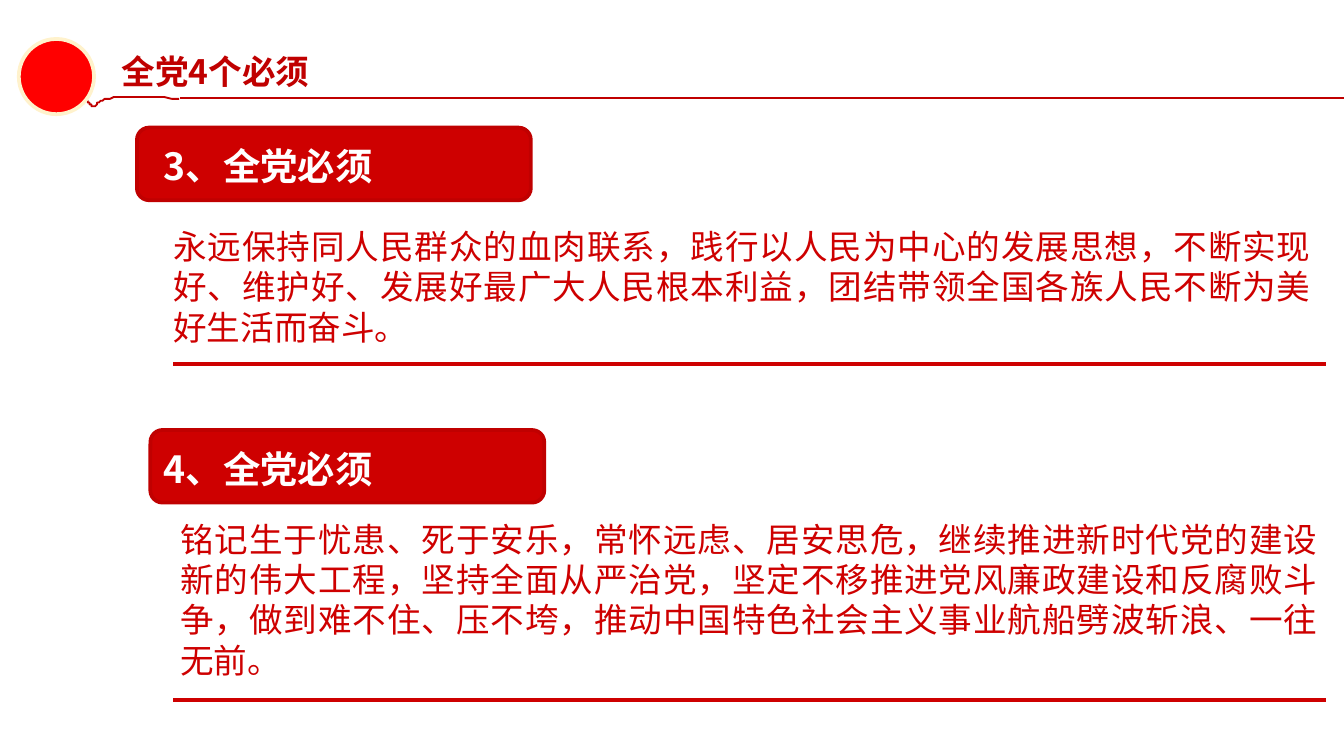
from lxml import etree
from pptx import Presentation
from pptx.dml.color import RGBColor
from pptx.enum.shapes import MSO_CONNECTOR, MSO_SHAPE
from pptx.enum.text import MSO_ANCHOR, MSO_AUTO_SIZE, PP_ALIGN
from pptx.oxml.ns import qn
from pptx.util import Pt

STRAIGHT = MSO_CONNECTOR.STRAIGHT
OVAL, ROUNDED = MSO_SHAPE.OVAL, MSO_SHAPE.ROUNDED_RECTANGLE
TOP, NO_FIT = MSO_ANCHOR.TOP, MSO_AUTO_SIZE.NONE
LEFT, JUSTIFY = PP_ALIGN.LEFT, PP_ALIGN.JUSTIFY

COLORS = {"dark": "C00000", "red": "CE0000", "sun": "FF0000",
          "cream": "FFF2CC", "white": "FFFFFF"}
FONT = "Noto Sans CJK SC"

WAVE_START = (25.9, 55.4)
WAVE_CURVES = [
    ((28.8, 54.7), (31.7, 51.1), (34.6, 51.8)),
    ((38.2, 51.8), (35.3, 55.4), (38.2, 56.2)),
    ((41, 56.9), (42.5, 53.3), (44.6, 53.3)),
    ((46.8, 53.3), (48.2, 56.9), (50.4, 56.9)),
    ((52.6, 56.9), (51.1, 53.3), (59, 52.6)),
    ((67, 51.8), (88.6, 52.6), (96.5, 52.6)),
]

SECTIONS = [
    {"heading": "3、全党必须", "banner": (73.4, 68.4), "heading_top": 73.4,
     "body": "永远保持同人民群众的血肉联系，践行以人民为中心的发展思想，不断实现好、维护好、发展好最广大人民根本利益，团结带领全国各族人民不断为美好生活而奋斗。",
     "body_box": (85.7, 117.4, 624.2, 72.7), "rule": 195.1},
    {"heading": "4、全党必须", "banner": (80.6, 230.4), "heading_top": 235.4,
     "body": "铭记生于忧患、死于安乐，常怀远虑、居安思危，继续推进新时代党的建设新的伟大工程，坚持全面从严治党，坚定不移推进党风廉政建设和反腐败斗争，做到难不住、压不垮，推动中国特色社会主义事业航船劈波斩浪、一往无前。",
     "body_box": (89.3, 274.3, 624.2, 94.3), "rule": 375.1},
]


def bezier_points(start, curves, steps=12):
    points = []
    for c1, c2, end in curves:
        for i in range(1, steps + 1):
            t = i / steps
            u = 1 - t
            points.append(tuple(
                u**3 * a + 3 * u * u * t * b + 3 * u * t * t * c + t**3 * d
                for a, b, c, d in zip(start, c1, c2, end)))
        start = end
    return points


class SlideBuilder:
    def __init__(self, slide):
        self.slide = slide

    def color(self, key):
        return RGBColor.from_string(COLORS[key])

    def outline(self, line, key, width):
        line.color.rgb = self.color(key)
        line.width = Pt(width)

    def shape(self, kind, box, fill, line):
        shape = self.slide.shapes.add_shape(kind, *map(Pt, box))
        shape.shadow.inherit = False
        shape.fill.solid()
        shape.fill.fore_color.rgb = self.color(fill)
        self.outline(shape.line, line, 2)

    def rule(self, start, end, key, width):
        rule = self.slide.shapes.add_connector(STRAIGHT, *map(Pt, start + end))
        self.outline(rule.line, key, width)
        etree.SubElement(rule._element.spPr, qn("a:effectLst"))

    def curve(self, start, curves, key, width):
        pen = self.slide.shapes.build_freeform(*start, scale=Pt(1))
        pen.add_line_segments(bezier_points(start, curves), close=False)
        wave = pen.convert_to_shape()
        wave.shadow.inherit = False
        wave.fill.background()
        self.outline(wave.line, key, width)

    def put_text(self, holder, box, text, size, key, bold=False, align=LEFT,
                 insets=(7.2, 3.6)):
        holder.left, holder.top, holder.width, holder.height = map(Pt, box)
        frame = holder.text_frame
        frame.word_wrap = True
        frame.auto_size = NO_FIT
        frame.vertical_anchor = TOP
        frame.margin_left = frame.margin_right = Pt(insets[0])
        frame.margin_top = frame.margin_bottom = Pt(insets[1])
        frame.text = text
        paragraph = frame.paragraphs[0]
        paragraph.alignment = align
        paragraph.space_before = Pt(0)
        properties = paragraph._p.get_or_add_pPr()
        properties.set("marL", "0")
        properties.set("indent", "0")
        etree.SubElement(properties, qn("a:buNone"))
        font = paragraph.font
        font.size, font.bold, font.name = Pt(size), bold, FONT
        font.color.rgb = self.color(key)
        etree.SubElement(properties.find(qn("a:defRPr")), qn("a:ea"), typeface=FONT)

    def text_box(self, box, *style, **options):
        holder = self.slide.shapes.add_textbox(*map(Pt, box))
        self.put_text(holder, box, *style, **options)


def main():
    deck = Presentation()
    deck.slide_width, deck.slide_height = Pt(720), Pt(405)
    slide = deck.slides.add_slide(deck.slide_layouts[3])
    builder = SlideBuilder(slide)
    title, *bodies = slide.placeholders

    builder.curve(WAVE_START, WAVE_CURVES, "dark", 1)
    builder.rule((96.5, 52.6), (720, 52.6), "dark", 1)
    builder.shape(OVAL, (10.1, 20.9, 40.3, 40.3), "sun", "cream")
    builder.put_text(title, (56.2, 24.5, 417.6, 26.6), "全党4个必须", 18, "dark",
                     bold=True, insets=(9, 2.9))

    for section, body in zip(SECTIONS, bodies):
        builder.shape(ROUNDED, section["banner"] + (211, 38.9), "red", "dark")
        builder.text_box((80.6, section["heading_top"], 211, 31.7),
                         section["heading"], 20, "white", bold=True)
        builder.put_text(body, section["body_box"], section["body"], 18, "red",
                         align=JUSTIFY)
        builder.rule((92.9, section["rule"]), (710.6, section["rule"]), "red", 2.5)

    deck.save("out.pptx")


if __name__ == "__main__":
    main()
